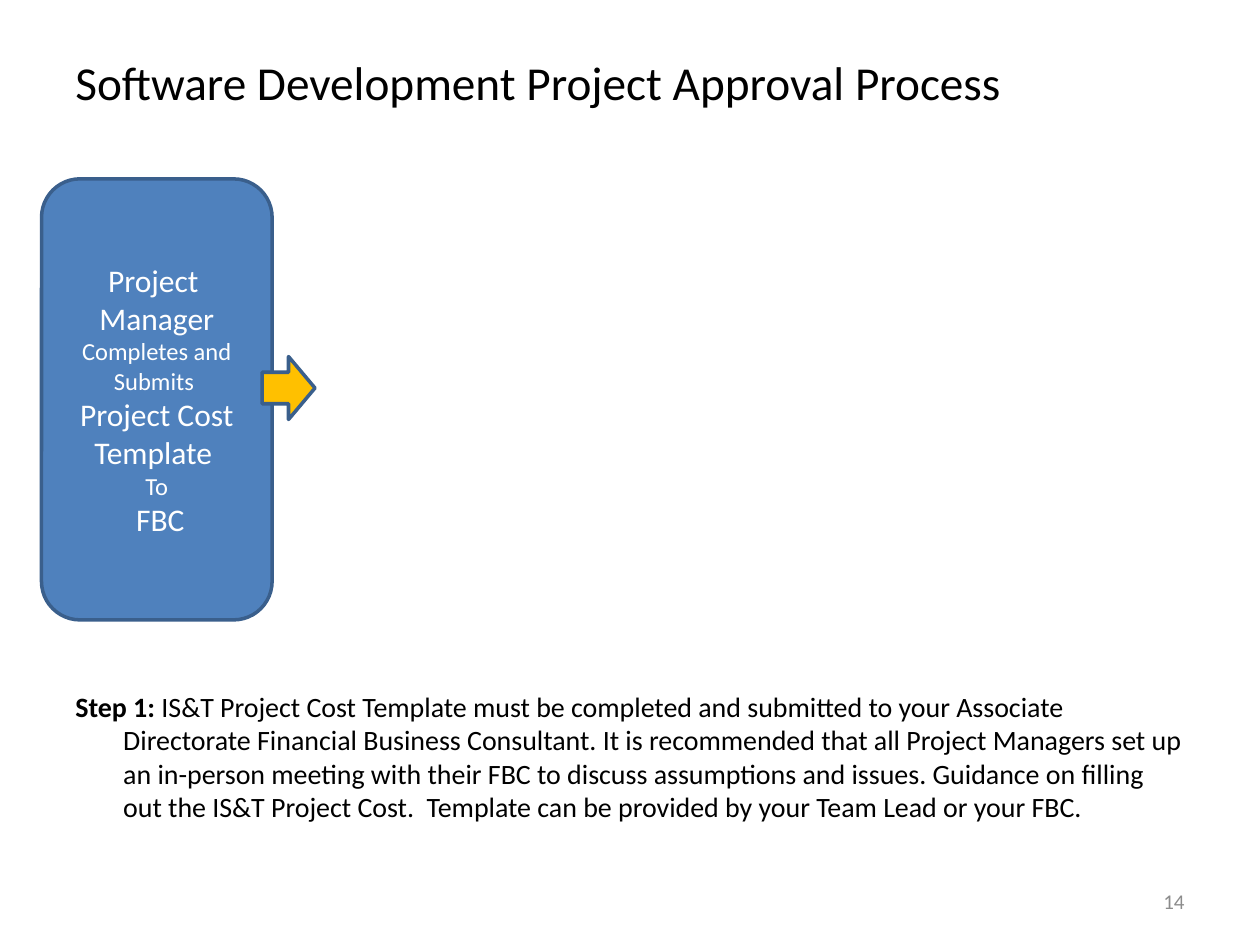
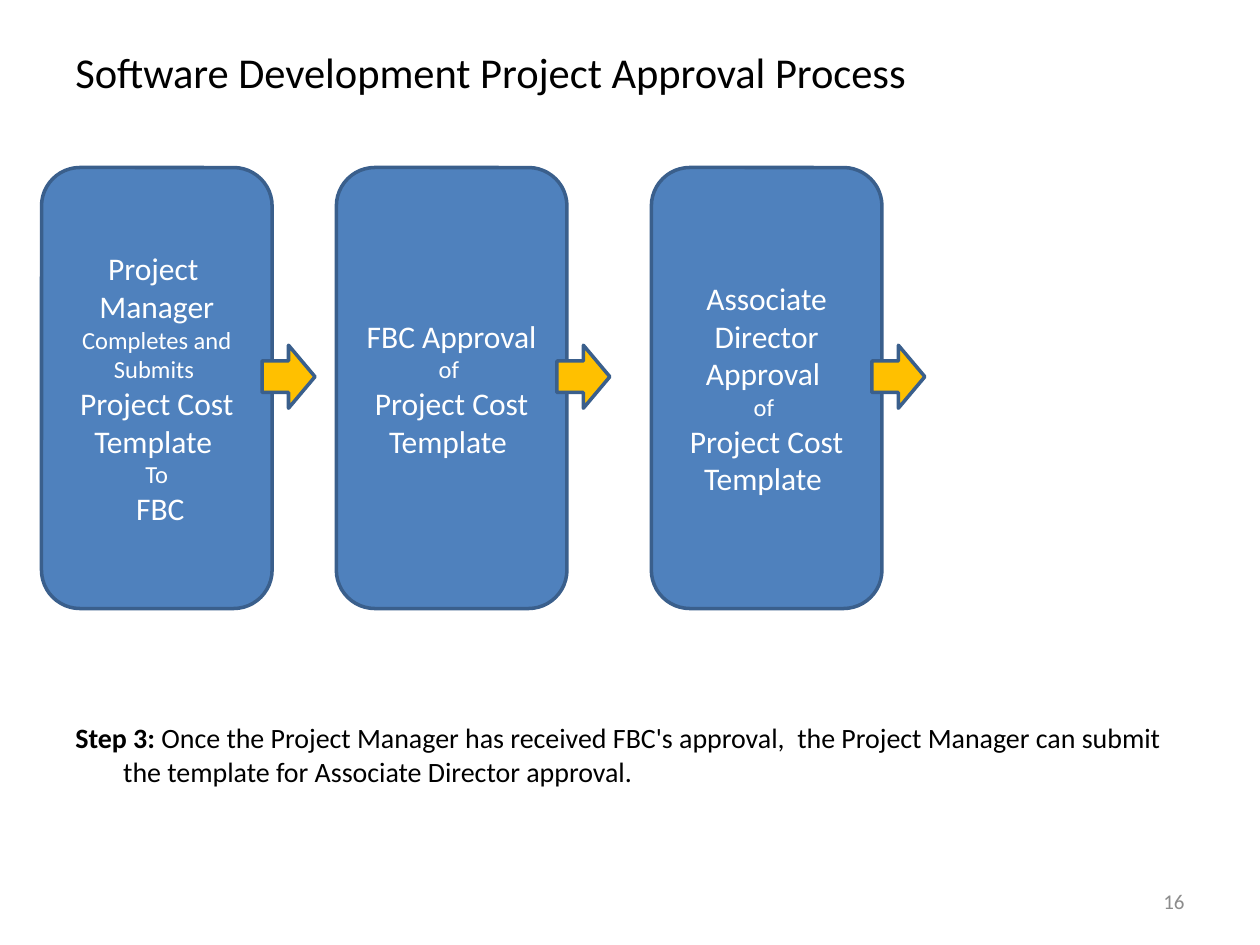
from dataclasses import dataclass

from pptx import Presentation
from pptx.dml.color import RGBColor
from pptx.enum.shapes import MSO_SHAPE
from pptx.enum.text import MSO_ANCHOR, PP_ALIGN
from pptx.util import Inches, Pt


@dataclass(frozen=True)
class Theme:
    font: str = "Calibri"
    ink: str = "000000"
    card: str = "4F81BD"
    outline: str = "3A5F8C"
    arrow: str = "FFC000"
    card_text: str = "FFFFFF"
    number: str = "8C8C8C"
    step_size: float = 16
    role_size: float = 18
    link_size: float = 14
    number_size: float = 12
    outline_width: float = 2


THEME = Theme()
CARD_WIDTH, CARD_HEIGHT = 1.83, 3.5
ARROW_WIDTH, ARROW_HEIGHT = 0.42, 0.5
ARROW_OFFSET = 1.75, 1.41

BIG, SMALL = THEME.role_size, THEME.link_size
TEMPLATE = [("Project Cost Template ", BIG)]
SUBMISSION = [
    [("Project  Manager ", BIG), ("Completes and Submits ", SMALL)],
    TEMPLATE,
    [("To", SMALL)],
    [(" FBC", BIG)],
]
FBC_APPROVAL = [[("FBC Approval ", BIG), ("of ", SMALL)], TEMPLATE]
DIRECTOR_APPROVAL = [
    [("Associate Director Approval ", BIG)],
    [("of ", SMALL)],
    TEMPLATE,
]
STAGES = [(0.33, SUBMISSION), (2.67, FBC_APPROVAL), (5.17, DIRECTOR_APPROVAL)]


def add_run(paragraph, text, size, color=THEME.ink, bold=False):
    run = paragraph.add_run()
    run.text = text
    run.font.name = THEME.font
    run.font.size = Pt(size)
    run.font.bold = bold
    run.font.color.rgb = RGBColor.from_string(color)


def write_text(frame, paragraphs, color=THEME.ink, align=PP_ALIGN.LEFT,
               anchor=MSO_ANCHOR.MIDDLE, hanging=0):
    frame.word_wrap = True
    frame.vertical_anchor = anchor
    for index, runs in enumerate(paragraphs):
        paragraph = frame.add_paragraph() if index else frame.paragraphs[0]
        paragraph.alignment = align
        if hanging:
            properties = paragraph._p.get_or_add_pPr()
            properties.set("marL", str(Inches(hanging)))
            properties.set("indent", str(-Inches(hanging)))
        for text, size, *bold in runs:
            add_run(paragraph, text, size, color, *bold)


def add_label(slide, box, runs, **text_format):
    label = slide.shapes.add_textbox(*map(Inches, box))
    write_text(label.text_frame, [runs], **text_format)


def add_outlined(slide, preset, box, fill):
    shape = slide.shapes.add_shape(preset, *map(Inches, box))
    shape.shadow.inherit = False
    shape.fill.solid()
    shape.fill.fore_color.rgb = RGBColor.from_string(fill)
    shape.line.color.rgb = RGBColor.from_string(THEME.outline)
    shape.line.width = Pt(THEME.outline_width)
    return shape


def add_stage(slide, left, top, paragraphs):
    card = add_outlined(slide, MSO_SHAPE.ROUNDED_RECTANGLE,
                        (left, top, CARD_WIDTH, CARD_HEIGHT), THEME.card)
    write_text(card.text_frame, paragraphs, color=THEME.card_text,
               align=PP_ALIGN.CENTER)
    across, down = ARROW_OFFSET
    add_outlined(slide, MSO_SHAPE.RIGHT_ARROW,
                 (left + across, top + down, ARROW_WIDTH, ARROW_HEIGHT),
                 THEME.arrow)


def add_process_slide(deck, number, step, explanation, stage_count,
                      title_height, title_size, stage_top, step_top):
    slide = deck.slides.add_slide(deck.slide_layouts[6])
    add_label(slide, (0.5, 0.3, 9, title_height),
              [("Software Development Project Approval Process", title_size)])
    add_label(slide, (0.5, step_top, 9, 6.7 - step_top),
              [(step, THEME.step_size, True), (explanation, THEME.step_size)],
              anchor=MSO_ANCHOR.TOP, hanging=0.38)
    for left, paragraphs in STAGES[:stage_count]:
        add_stage(slide, left, stage_top, paragraphs)
    add_label(slide, (7.17, 6.95, 2.33, 0.4),
              [(number, THEME.number_size)],
              color=THEME.number, align=PP_ALIGN.RIGHT)


def main():
    deck = Presentation()
    deck.slide_width, deck.slide_height = Inches(10), Inches(7.5)
    add_process_slide(
        deck, "14", "Step 1: ",
        "IS&T Project Cost Template must be completed and submitted to your "
        "Associate Directorate Financial Business Consultant. It is "
        "recommended that all Project Managers set up an in-person meeting "
        "with their FBC to discuss assumptions and issues. Guidance on "
        "filling out the IS&T Project Cost.  Template can be provided by "
        "your Team Lead or your FBC.",
        stage_count=1, title_height=0.7, title_size=27,
        stage_top=1.42, step_top=5.42)
    add_process_slide(
        deck, "16", "Step 3: ",
        "Once the Project Manager has received FBC's approval,  the Project "
        "Manager can submit the template for Associate Director approval.",
        stage_count=3, title_height=0.53, title_size=24.3,
        stage_top=1.33, step_top=5.67)
    deck.save("out.pptx")


if __name__ == "__main__":
    main()
